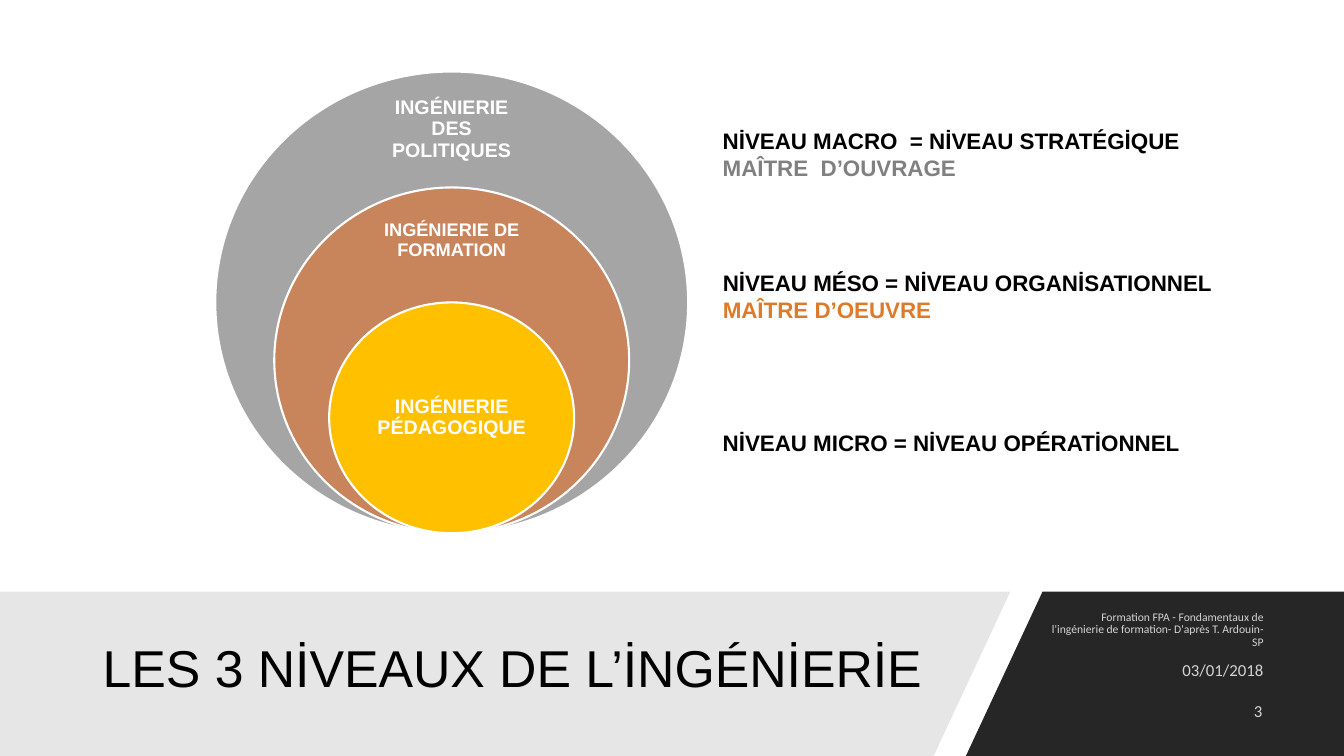
from pptx import Presentation
from pptx.dml.color import RGBColor
from pptx.enum.shapes import MSO_SHAPE
from pptx.enum.text import MSO_ANCHOR, PP_ALIGN
from pptx.util import Inches, Pt

BLACK = RGBColor(0x00, 0x00, 0x00)
WHITE = RGBColor(0xFF, 0xFF, 0xFF)
DARK = RGBColor(0x26, 0x26, 0x26)
LIGHT = RGBColor(0xE7, 0xE6, 0xE6)
FOOTER = RGBColor(0xD4, 0xD4, 0xD4)
GREY = RGBColor(0xA5, 0xA5, 0xA5)
COPPER = RGBColor(0xC8, 0x85, 0x5C)
GOLD = RGBColor(0xFF, 0xC0, 0x00)
TEXT_GREY = RGBColor(0x80, 0x80, 0x80)
TEXT_ORANGE = RGBColor(0xDE, 0x7B, 0x2A)

BAND_TOP, BAND_BOTTOM = 5.87, 7.5
CENTER_X, CIRCLES_BOTTOM = 4.48, 5.29
LEVEL_LEFT = 7.07


def add_text(p, text, size=16, font="Arial", color=BLACK, bold=False,
             align=PP_ALIGN.LEFT, spacing=1.0):
    p.alignment = align
    p.line_spacing = spacing
    r = p.add_run()
    r.text = text
    r.font.size = Pt(size)
    r.font.name = font
    r.font.bold = bold
    r.font.color.rgb = color


class SlideBuilder:
    def __init__(self, slide, font="Arial"):
        self.s = slide
        self.font = font

    def polygon(self, points, fill):
        corners = [(Inches(x), Inches(y)) for x, y in points]
        builder = self.s.shapes.build_freeform(*corners[0], scale=1.0)
        builder.add_line_segments(corners[1:], close=True)
        sp = builder.convert_to_shape()
        sp.shadow.inherit = False
        sp.fill.solid()
        sp.fill.fore_color.rgb = fill
        sp.line.fill.background()

    def circle(self, width, height, fill):
        sp = self.s.shapes.add_shape(
            MSO_SHAPE.OVAL, Inches(CENTER_X - width / 2),
            Inches(CIRCLES_BOTTOM - height), Inches(width), Inches(height))
        sp.shadow.inherit = False
        sp.fill.solid()
        sp.fill.fore_color.rgb = fill
        sp.line.color.rgb = WHITE
        sp.line.width = Pt(1.5)

    def text(self, box, lines, anchor=MSO_ANCHOR.MIDDLE, inset=None, **style):
        tf = self.s.shapes.add_textbox(*map(Inches, box)).text_frame
        tf.word_wrap = True
        tf.vertical_anchor = anchor
        if inset is not None:
            tf.margin_left = tf.margin_right = Inches(inset)
            tf.margin_top = tf.margin_bottom = Inches(inset)
        for i, (text, color) in enumerate(lines):
            p = tf.paragraphs[0] if i == 0 else tf.add_paragraph()
            add_text(p, text, color=color, **{"font": self.font, **style})


def main():
    prs = Presentation()
    prs.slide_width, prs.slide_height = Inches(13.33), Inches(7.5)
    slide = SlideBuilder(prs.slides.add_slide(prs.slide_layouts[6]))

    slide.polygon([(10.34, BAND_TOP), (13.33, BAND_TOP),
                   (13.33, BAND_BOTTOM), (9.58, BAND_BOTTOM)], DARK)
    slide.polygon([(0, BAND_TOP), (10.02, BAND_TOP),
                   (9.26, BAND_BOTTOM), (0, BAND_BOTTOM)], LIGHT)
    slide.text((0.92, 6.05, 8.44, 1.2),
               [("LES 3 NİVEAUX DE L’İNGÉNİERİE", BLACK)], size=37, spacing=0.9)

    footers = [
        (10.3, 6.05, 2.33, 8.3, 0.9, "Formation FPA - Fondamentaux de "
         "l'ingénierie de formation- D'après T. Ardouin-SP"),
        (10.3, 6.45, 2.33, 12, 1.0, "03/01/2018"),
        (11.15, 6.85, 1.47, 12, 1.0, "3"),
    ]
    for left, top, width, size, spacing, text in footers:
        slide.text((left, top, width, 0.4), [(text, FOOTER)], size=size,
                   font="Calibri", align=PP_ALIGN.RIGHT, spacing=spacing)

    circles = [
        (4.69, 4.58, GREY, 0.94, 1.64, 0.69, 14, "INGÉNIERIE DES POLITIQUES"),
        (3.52, 3.43, COPPER, 2.07, 1.64, 0.64, 13, "INGÉNIERIE DE FORMATION"),
        (2.43, 2.29, GOLD, 3.57, 1.72, 1.14, 14, "INGÉNIERIE PÉDAGOGIQUE"),
    ]
    for width, height, fill, top, text_w, text_h, size, text in circles:
        slide.circle(width, height, fill)
        slide.text((CENTER_X - text_w / 2, top, text_w, text_h),
                   [(text, WHITE)], inset=0.1, size=size, bold=True,
                   align=PP_ALIGN.CENTER, spacing=0.9)

    levels = [
        (1.21, 5.03, 0.64, [("NİVEAU MACRO  = NİVEAU STRATÉGİQUE", BLACK),
                            ("MAÎTRE  D’OUVRAGE", TEXT_GREY)]),
        (2.62, 5.39, 0.64, [("NİVEAU MÉSO = NİVEAU ORGANİSATIONNEL", BLACK),
                            ("MAÎTRE D’OEUVRE", TEXT_ORANGE)]),
        (4.21, 5.16, 0.67, [("NİVEAU MICRO = NİVEAU OPÉRATİONNEL", BLACK)]),
    ]
    for top, width, height, lines in levels:
        slide.text((LEVEL_LEFT, top, width, height), lines,
                   anchor=MSO_ANCHOR.TOP, bold=True)

    prs.save("out.pptx")


if __name__ == "__main__":
    main()
